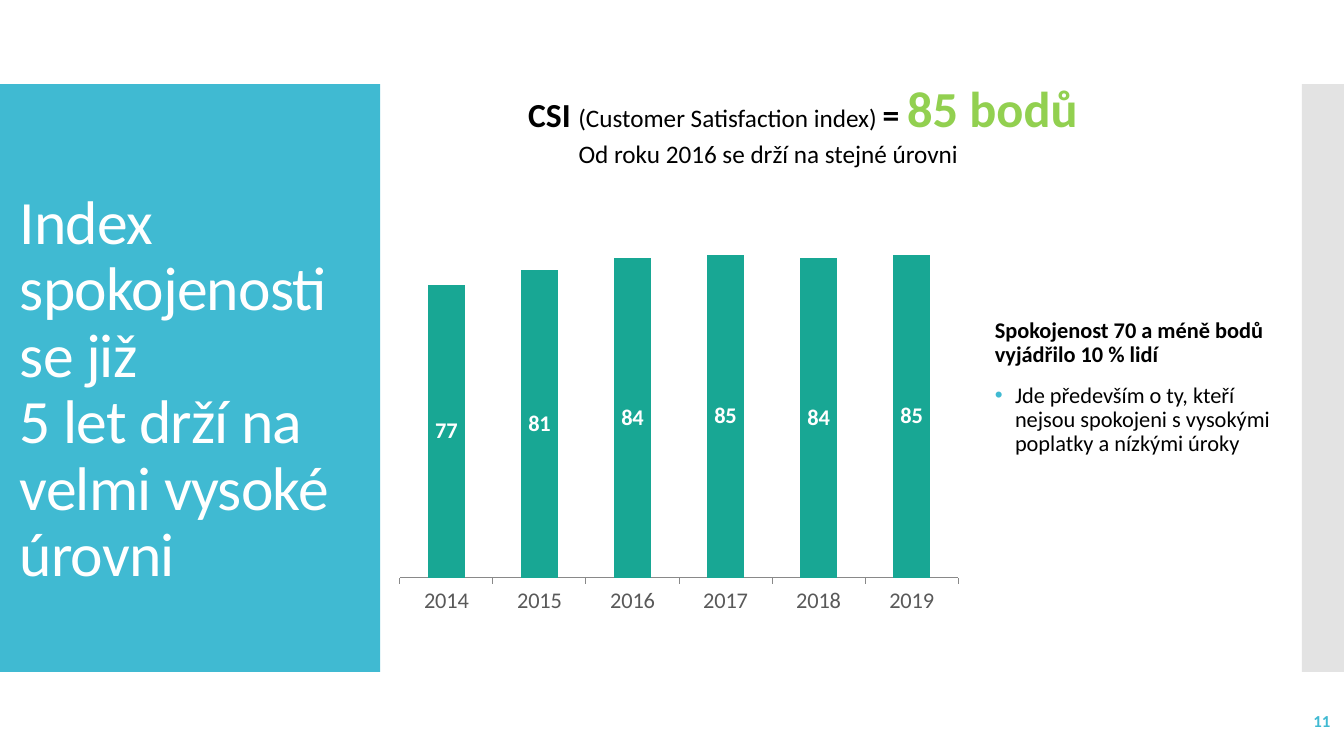
from lxml.etree import SubElement, fromstring
from pptx import Presentation
from pptx.chart.data import CategoryChartData
from pptx.dml.color import RGBColor
from pptx.enum.chart import XL_CHART_TYPE as ChartType, XL_LABEL_POSITION as LabelPosition
from pptx.enum.chart import XL_TICK_LABEL_POSITION as TickLabels, XL_TICK_MARK as Tick
from pptx.enum.shapes import MSO_SHAPE as Shape
from pptx.enum.text import MSO_ANCHOR as Anchor, PP_ALIGN as Align
from pptx.oxml.ns import qn
from pptx.util import Cm, Pt

FONT = "Calibri"
COLORS = {"teal": "40BAD2", "grey": "C8C8C8", "white": "FFFFFF", "black": "000000",
          "lime": "92D050", "bar": "18A794", "axis": "898989", "label": "595959"}

TITLE = ["Index spokojenosti se již", "5 let drží na velmi vysoké úrovni"]
HEADLINE = [("CSI ", 24, True, "black"), ("(Customer Satisfaction index) ", 18, False, "black"),
            ("= ", 24, True, "black"), ("85 bodů", 36, True, "lime")]
SUBLINE = "Od roku 2016 se drží na stejné úrovni"
NOTE_HEAD = "Spokojenost 70 a méně bodů vyjádřilo 10 % lidí"
NOTE_ITEM = "Jde především o ty, kteří nejsou spokojeni s vysokými poplatky a nízkými úroky"
PAGE_NUMBER = "11"
SCORES = {"2014": 77, "2015": 81, "2016": 84, "2017": 85, "2018": 84, "2019": 85}
PLOT = {"x": 0.015, "y": 0.039, "w": 0.967, "h": 0.869}

PAGE_WIDTH, PAGE_HEIGHT = 33.87, 19.05
BAND_TOP, BAND_HEIGHT = 2.12, 14.81
PANEL_WIDTH, STRIP_WIDTH = 9.58, 1.06


def rgb(name):
    return RGBColor.from_string(COLORS[name])


def style(font, size, color, bold=False):
    font.name, font.size, font.bold = FONT, Pt(size), bold
    font.color.rgb = rgb(color)


def add_span(para, text, size, color, bold=False):
    span = para.add_run()
    span.text = text
    style(span.font, size, color, bold)
    return span


def add_box(page, left, top, width, height, anchor=Anchor.MIDDLE):
    frame = page.shapes.add_textbox(Cm(left), Cm(top), Cm(width), Cm(height)).text_frame
    frame.word_wrap = True
    frame.vertical_anchor = anchor
    return frame


def add_band(page, left, width, color):
    band = page.shapes.add_shape(Shape.RECTANGLE, Cm(left), Cm(BAND_TOP), Cm(width), Cm(BAND_HEIGHT))
    band.shadow.inherit = False
    band.fill.solid()
    band.fill.fore_color.rgb = rgb(color)
    band.line.fill.background()
    return band


def add_title(page):
    para = add_box(page, 0.25, 3.45, 8.69, 12.78).paragraphs[0]
    para.line_spacing = 0.9
    for index, line in enumerate(TITLE):
        if index:
            para.add_line_break()
        span = add_span(para, line, 44, "white")
        span.font._element.set("spc", "-60")


def add_headline(page):
    frame = add_box(page, 13.06, 1.83, 16.18, 2.57, Anchor.TOP)
    for text, size, bold, color in HEADLINE:
        add_span(frame.paragraphs[0], text, size, color, bold)
    para = frame.add_paragraph()
    para._p.get_or_add_pPr().set("marL", str(Cm(1.27)))
    add_span(para, SUBLINE, 18, "black")


def add_note(page):
    frame = add_box(page, 24.82, 5.2, 7.59, 9.14)
    head, item = frame.paragraphs[0], frame.add_paragraph()
    head.line_spacing = item.line_spacing = 0.9
    item.space_before = Pt(12)
    props = item._p.get_or_add_pPr()
    props.set("marL", str(Cm(0.51)))
    props.set("indent", str(Cm(-0.51)))
    bullet_color = SubElement(props, qn("a:buClr"))
    SubElement(bullet_color, qn("a:srgbClr"), val=COLORS["teal"])
    SubElement(props, qn("a:buFont"), typeface="Arial")
    SubElement(props, qn("a:buChar"), char="•")
    add_span(head, NOTE_HEAD, 16, "black", True)
    add_span(item, NOTE_ITEM, 16, "black")


def add_score_chart(page):
    data = CategoryChartData()
    data.categories = list(SCORES)
    data.add_series("Series 1", list(SCORES.values()))
    chart = page.shapes.add_chart(ChartType.COLUMN_CLUSTERED, Cm(9.86), Cm(4.55),
                                  Cm(14.55), Cm(11.02), data).chart
    chart.has_legend = chart.has_title = False
    style(chart.font, 12, "black")

    years, points = chart.category_axis, chart.value_axis
    years.major_tick_mark = Tick.OUTSIDE
    years.format.line.color.rgb = rgb("axis")
    style(years.tick_labels.font, 16, "label")
    points.minimum_scale, points.maximum_scale = 0, 100
    points.has_major_gridlines = points.visible = False
    points.tick_label_position = TickLabels.NONE

    plot = chart.plots[0]
    plot.gap_width, plot.vary_by_categories = 150, False
    bars = plot.series[0]
    bars.format.fill.solid()
    bars.format.fill.fore_color.rgb = rgb("bar")
    labels = bars.data_labels
    labels.show_value, labels.position = True, LabelPosition.CENTER
    style(labels.font, 16, "white", True)

    area = chart._chartSpace.chart.plotArea
    for old in area.findall(qn("c:layout")):
        area.remove(old)
    settings = {"layoutTarget": "inner", "xMode": "edge", "yMode": "edge", **PLOT}
    parts = "".join(f'<c:{key} val="{value}"/>' for key, value in settings.items())
    area.insert(0, fromstring(
        '<c:layout xmlns:c="http://schemas.openxmlformats.org/drawingml/2006/chart">'
        f"<c:manualLayout>{parts}</c:manualLayout></c:layout>"))


def main():
    """Build the customer satisfaction index slide."""
    deck = Presentation()
    deck.slide_width, deck.slide_height = Cm(PAGE_WIDTH), Cm(PAGE_HEIGHT)
    page = deck.slides.add_slide(deck.slide_layouts[6])

    add_band(page, 0, PANEL_WIDTH, "teal")
    strip = add_band(page, PAGE_WIDTH - STRIP_WIDTH, STRIP_WIDTH, "grey")
    strip_color = strip._element.spPr.find(qn("a:solidFill"))[0]
    SubElement(strip_color, qn("a:alpha"), val="50000")

    add_title(page)
    number = add_box(page, 29.54, 17.65, 4.24, 1.02).paragraphs[0]
    number.alignment = Align.RIGHT
    add_span(number, PAGE_NUMBER, 12, "teal", True)
    add_headline(page)
    add_score_chart(page)
    add_note(page)
    deck.save("out.pptx")


if __name__ == "__main__":
    main()
